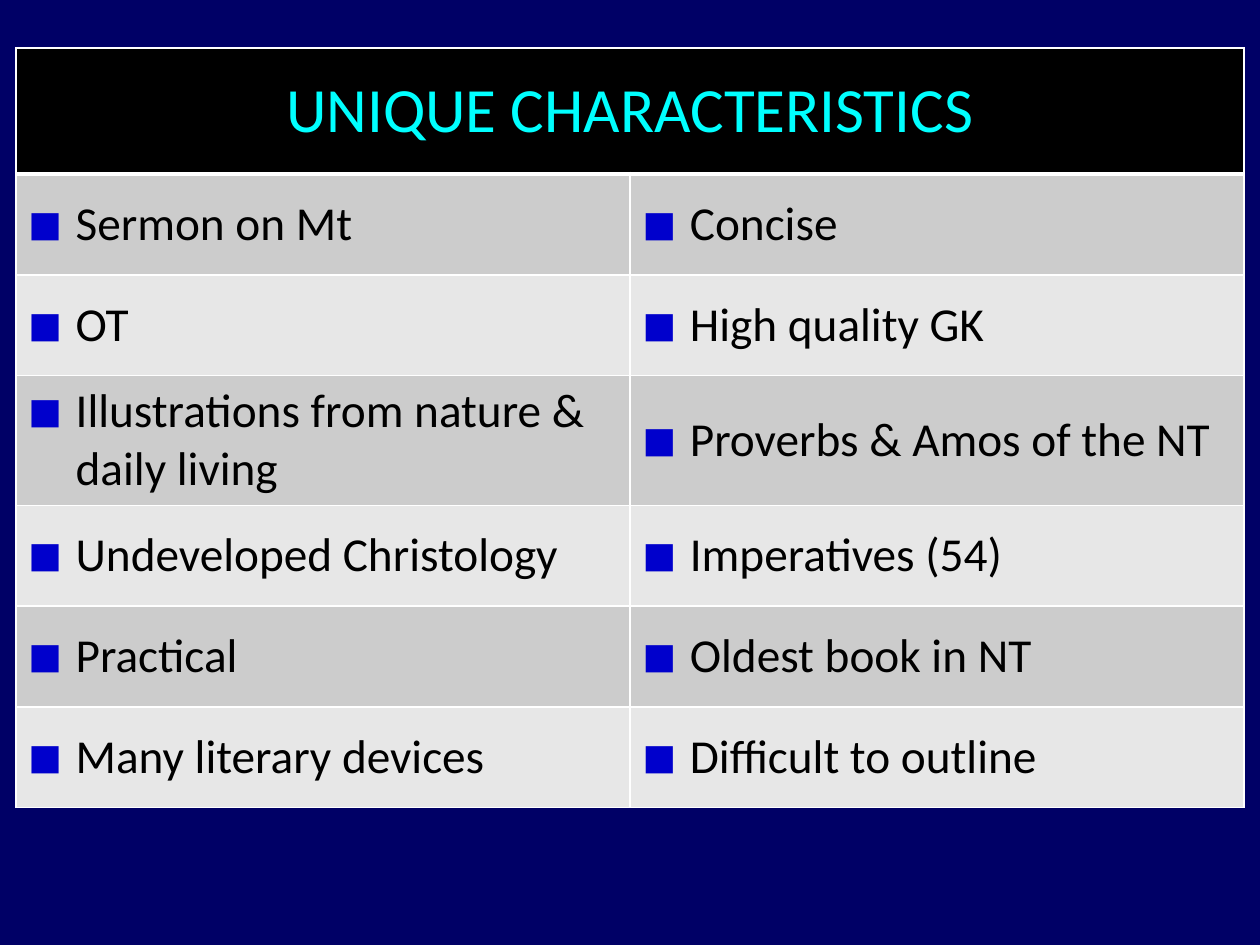
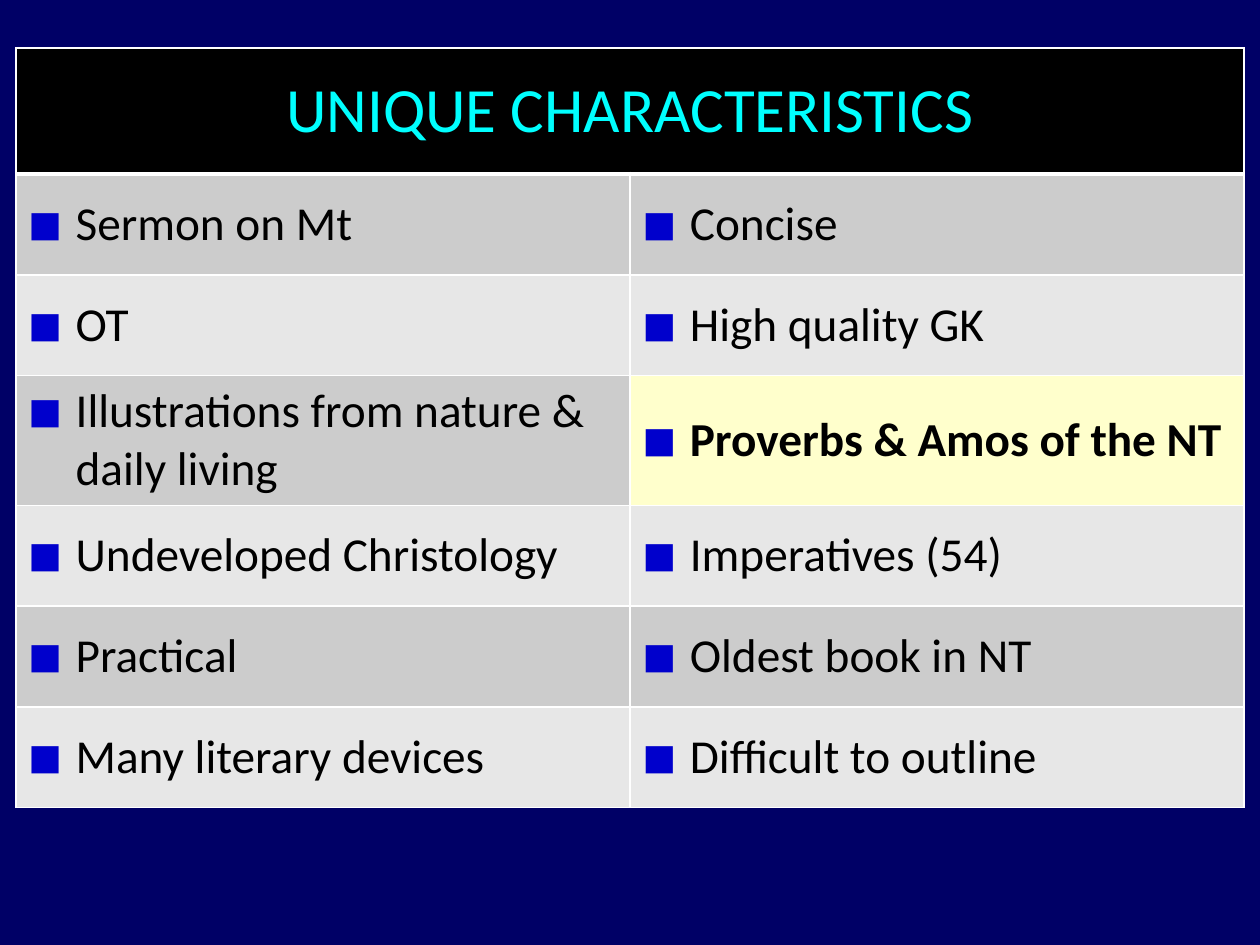
from lxml import etree
from pptx import Presentation
from pptx.dml.color import RGBColor
from pptx.enum.text import MSO_ANCHOR, PP_ALIGN
from pptx.oxml.ns import qn
from pptx.util import Pt

CENTER = PP_ALIGN.CENTER
LEFT = PP_ALIGN.LEFT
MIDDLE = MSO_ANCHOR.MIDDLE
BLANK_LAYOUT = 6

FONT = "Calibri"
COLORS = {
    "background": "000066",
    "header": "000000",
    "heading": "00FFFF",
    "text": "000000",
    "bullet": "0000CC",
    "border": "FFFFFF",
    "dark_band": "CCCCCC",
    "light_band": "E7E7E7",
    "highlight": "FFFFCC",
}
HEADING = "UNIQUE CHARACTERISTICS"
CHARACTERISTICS = [
    ("Sermon on Mt", "Concise"),
    ("OT", "High quality GK"),
    ("Illustrations from nature & daily living", "Proverbs & Amos of the NT"),
    ("Undeveloped Christology", "Imperatives (54)"),
    ("Practical", "Oldest book in NT"),
    ("Many literary devices", "Difficult to outline"),
]
TABLE_LEFT, TABLE_TOP = 9, 27.4
COLUMN_WIDTH = 351
HEADER_HEIGHT, ROW_HEIGHT, TALL_ROW_HEIGHT = 72, 57.6, 74.16
TALL_ROW = 3
BULLET_INDENT = 27
THIN, THICK = 1, 3


class Deck:
    def __init__(self):
        self.presentation = Presentation()
        self.presentation.slide_width = Pt(720)
        self.presentation.slide_height = Pt(540)
        self.slide = None

    def color(self, name):
        return RGBColor.from_string(COLORS[name])

    def add_slide(self):
        layout = self.presentation.slide_layouts[BLANK_LAYOUT]
        self.slide = self.presentation.slides.add_slide(layout)
        fill = self.slide.background.fill
        fill.solid()
        fill.fore_color.rgb = self.color("background")

    def add_borders(self, cell, top, bottom):
        properties = cell._tc.get_or_add_tcPr()
        widths = {"a:lnL": THIN, "a:lnR": THIN, "a:lnT": top, "a:lnB": bottom}
        for position, (tag, width) in enumerate(widths.items()):
            line = etree.Element(qn(tag), w=str(Pt(width)))
            fill = etree.SubElement(line, qn("a:solidFill"))
            etree.SubElement(fill, qn("a:srgbClr"), val=COLORS["border"])
            properties.insert(position, line)

    def add_bullet(self, paragraph):
        properties = paragraph._p.get_or_add_pPr()
        properties.set("marL", str(Pt(BULLET_INDENT)))
        properties.set("indent", str(-Pt(BULLET_INDENT)))
        bullet_color = etree.SubElement(properties, qn("a:buClr"))
        etree.SubElement(bullet_color, qn("a:srgbClr"), val=COLORS["bullet"])
        etree.SubElement(properties, qn("a:buSzPct"), val="75000")
        etree.SubElement(properties, qn("a:buFont"), typeface=FONT)
        etree.SubElement(properties, qn("a:buChar"), char="■")

    def style_cell(self, cell, fill, top=THIN, bottom=THIN):
        cell.fill.solid()
        cell.fill.fore_color.rgb = self.color(fill)
        cell.vertical_anchor = MIDDLE
        self.add_borders(cell, top, bottom)

    def write_cell(self, cell, text, size, color, bold=False, bulleted=True):
        cell.text = text
        paragraph = cell.text_frame.paragraphs[0]
        paragraph.alignment = LEFT if bulleted else CENTER
        if bulleted:
            self.add_bullet(paragraph)
        font = paragraph.font
        font.name = FONT
        font.size = Pt(size)
        font.bold = bold
        font.color.rgb = self.color(color)

    def add_table(self, heading, rows, highlighted=None):
        heights = [HEADER_HEIGHT] + [ROW_HEIGHT] * len(rows)
        heights[TALL_ROW] = TALL_ROW_HEIGHT
        table = self.slide.shapes.add_table(
            len(heights), 2, Pt(TABLE_LEFT), Pt(TABLE_TOP),
            Pt(2 * COLUMN_WIDTH), Pt(sum(heights)),
        ).table
        table.first_row = False
        table.horz_banding = False
        for column in table.columns:
            column.width = Pt(COLUMN_WIDTH)
        for row, height in zip(table.rows, heights):
            row.height = Pt(height)

        header = table.cell(0, 0)
        header.merge(table.cell(0, 1))
        for cell in table.rows[0].cells:
            self.style_cell(cell, "header", bottom=THICK)
        self.write_cell(header, heading, 36, "heading", bulleted=False)

        for row_number, texts in enumerate(rows, start=1):
            band = "dark_band" if row_number % 2 else "light_band"
            top = THICK if row_number == 1 else THIN
            for column_number, text in enumerate(texts):
                cell = table.cell(row_number, column_number)
                is_highlighted = text == highlighted
                self.style_cell(cell, "highlight" if is_highlighted else band, top=top)
                self.write_cell(cell, text, 27, "text", bold=is_highlighted)


def main():
    deck = Deck()
    for highlighted in (None, "Proverbs & Amos of the NT"):
        deck.add_slide()
        deck.add_table(HEADING, CHARACTERISTICS, highlighted)
    deck.presentation.save("out.pptx")


if __name__ == "__main__":
    main()
